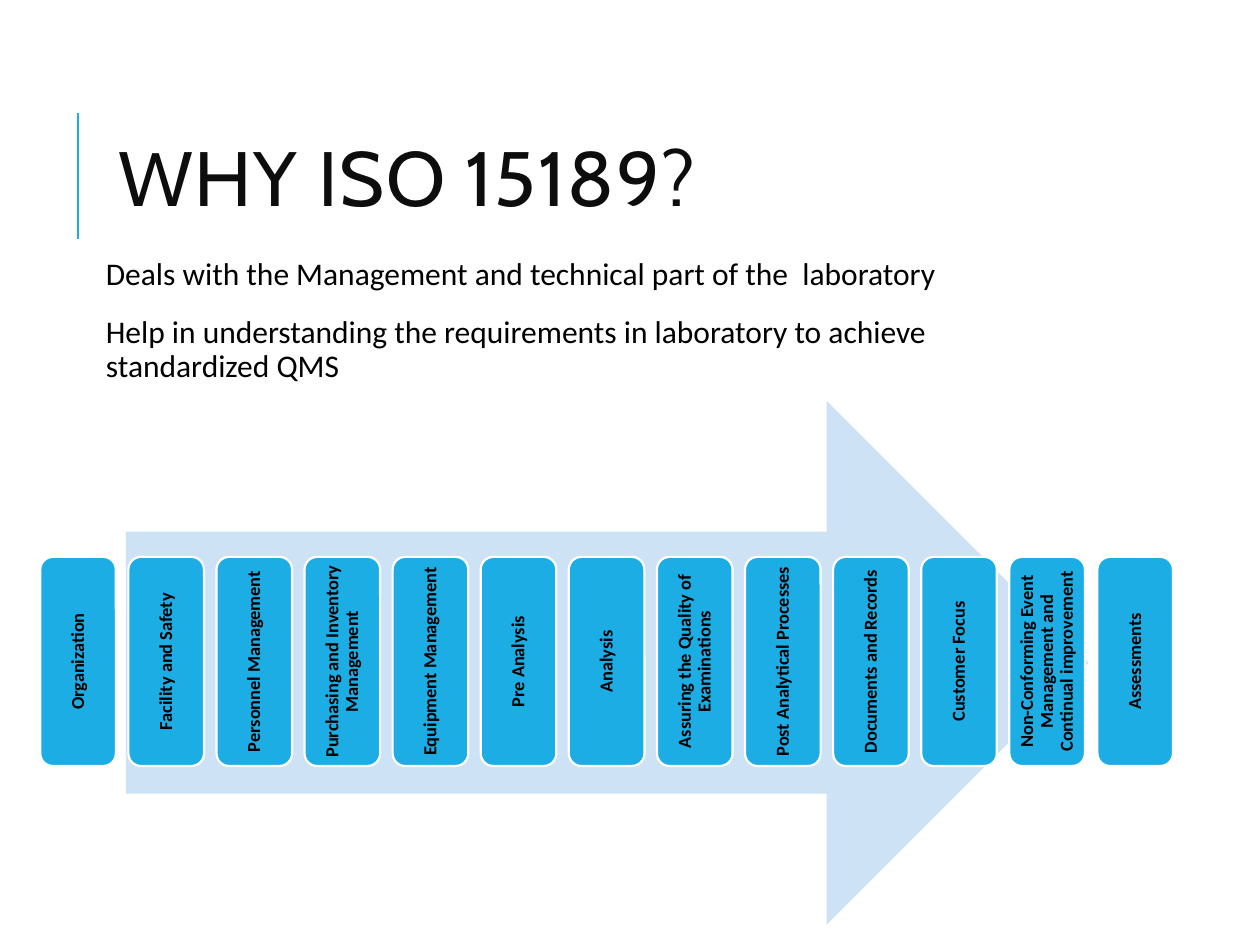
from lxml.etree import SubElement
from pptx import Presentation
from pptx.dml.color import RGBColor
from pptx.enum.shapes import MSO_CONNECTOR, MSO_SHAPE
from pptx.enum.text import MSO_ANCHOR, PP_ALIGN
from pptx.oxml.ns import qn
from pptx.util import Inches, Pt

# Content
TITLE = "WHY ISO 15189?"
POINTS = [
    "Deals with the Management and technical part of the  laboratory",
    "Help in understanding the requirements in laboratory to achieve standardized QMS",
]
STEPS = [
    "Organization",
    "Facility and Safety",
    "Personnel Management",
    "Purchasing and Inventory Management",
    "Equipment Management",
    "Pre Analysis",
    "Analysis",
    "Assuring the Quality of Examinations",
    "Post Analytical Processes",
    "Documents and Records",
    "Customer Focus",
    "Non-Conforming Event Management and Continual improvement",
    "Assessments",
]

# Colours
BLUE = RGBColor(0x1C, 0xAD, 0xE4)
PALE_BLUE = RGBColor(0xCD, 0xE3, 0xF5)
WHITE = RGBColor(0xFF, 0xFF, 0xFF)
BLACK = RGBColor(0, 0, 0)
NEAR_BLACK = RGBColor(0x0D, 0x0D, 0x0D)

# Step row: left edge of the first and last card, card size, label margin
FIRST_LEFT, LAST_LEFT = 0.32, 8.71
CARD_TOP, CARD_WIDTH, CARD_HEIGHT = 4.42, 0.6, 1.66
LABEL_MARGIN = 0.02
PITCH = (LAST_LEFT - FIRST_LEFT) / (len(STEPS) - 1)


def set_insets(frame, left, others):
    frame.margin_left = Inches(left)
    frame.margin_right = frame.margin_top = frame.margin_bottom = Inches(others)


def style(para, size, font, color, line_spacing, bold=False):
    para.font.size = Pt(size)
    para.font.name = font
    para.font.color.rgb = color
    para.font.bold = bold
    para.line_spacing = line_spacing


def add_text(page, left, top, width, height):
    frame = page.shapes.add_textbox(*map(Inches, (left, top, width, height))).text_frame
    frame.word_wrap = True
    return frame


def add_plain(page, kind, left, top, width, height, color=None):
    shape = page.shapes.add_shape(kind, *map(Inches, (left, top, width, height)))
    shape.shadow.inherit = False
    shape.line.fill.background()
    if color is None:
        shape.fill.background()
    else:
        shape.fill.solid()
        shape.fill.fore_color.rgb = color
    return shape


def add_title(page):
    rule = page.shapes.add_connector(
        MSO_CONNECTOR.STRAIGHT, Inches(0.62), Inches(1.9), Inches(0.62), Inches(0.9))
    rule.line.color.rgb = BLUE
    rule.line.width = Pt(1.5)
    SubElement(rule.element.spPr, qn("a:effectLst"))

    frame = add_text(page, 0.84, 0.64, 7.97, 1.64)
    frame.vertical_anchor = MSO_ANCHOR.MIDDLE
    para = frame.paragraphs[0]
    style(para, 44, "Cabin", NEAR_BLACK, 0.8)
    span = para.add_run()
    span.text = TITLE
    span._r.get_or_add_rPr().set("spc", "100")  # letter spacing of 1 pt


def add_points(page):
    frame = add_text(page, 0.69, 2, 7.39, 1.1)
    set_insets(frame, 0.15, 0.05)
    for index, point in enumerate(POINTS):
        para = frame.add_paragraph() if index else frame.paragraphs[0]
        para.text = point
        para.space_after = Pt(14)
        style(para, 18, "Calibri", BLACK, 0.9)


def add_step(page, left, label):
    card = add_plain(page, MSO_SHAPE.ROUNDED_RECTANGLE,
                     left, CARD_TOP, CARD_WIDTH, CARD_HEIGHT, BLUE)
    card.line.color.rgb = WHITE
    card.line.width = Pt(1.25)

    # A square-cornered label gives the text nearly the full card height
    box = add_plain(page, MSO_SHAPE.RECTANGLE,
                    left + LABEL_MARGIN, CARD_TOP + LABEL_MARGIN,
                    CARD_WIDTH - 2 * LABEL_MARGIN, CARD_HEIGHT - 2 * LABEL_MARGIN)
    frame = box.text_frame
    frame.word_wrap = True
    frame.vertical_anchor = MSO_ANCHOR.MIDDLE
    set_insets(frame, 0.04, 0.04)
    frame._txBody.bodyPr.set("vert", "vert270")  # text reads upwards
    para = frame.paragraphs[0]
    para.text = label
    para.alignment = PP_ALIGN.CENTER
    style(para, 10.5, "Calibri", BLACK, 0.9, bold=True)


def main():
    deck = Presentation()
    deck.slide_width, deck.slide_height = Inches(10), Inches(7.5)
    page = deck.slides.add_slide(deck.slide_layouts[6])

    add_title(page)
    add_points(page)

    # Process arrow with its row of steps
    add_plain(page, MSO_SHAPE.RIGHT_ARROW, 1, 3.18, 7.64, 4.16, PALE_BLUE)
    for index, label in enumerate(STEPS):
        add_step(page, FIRST_LEFT + index * PITCH, label)

    deck.save("out.pptx")


if __name__ == "__main__":
    main()
